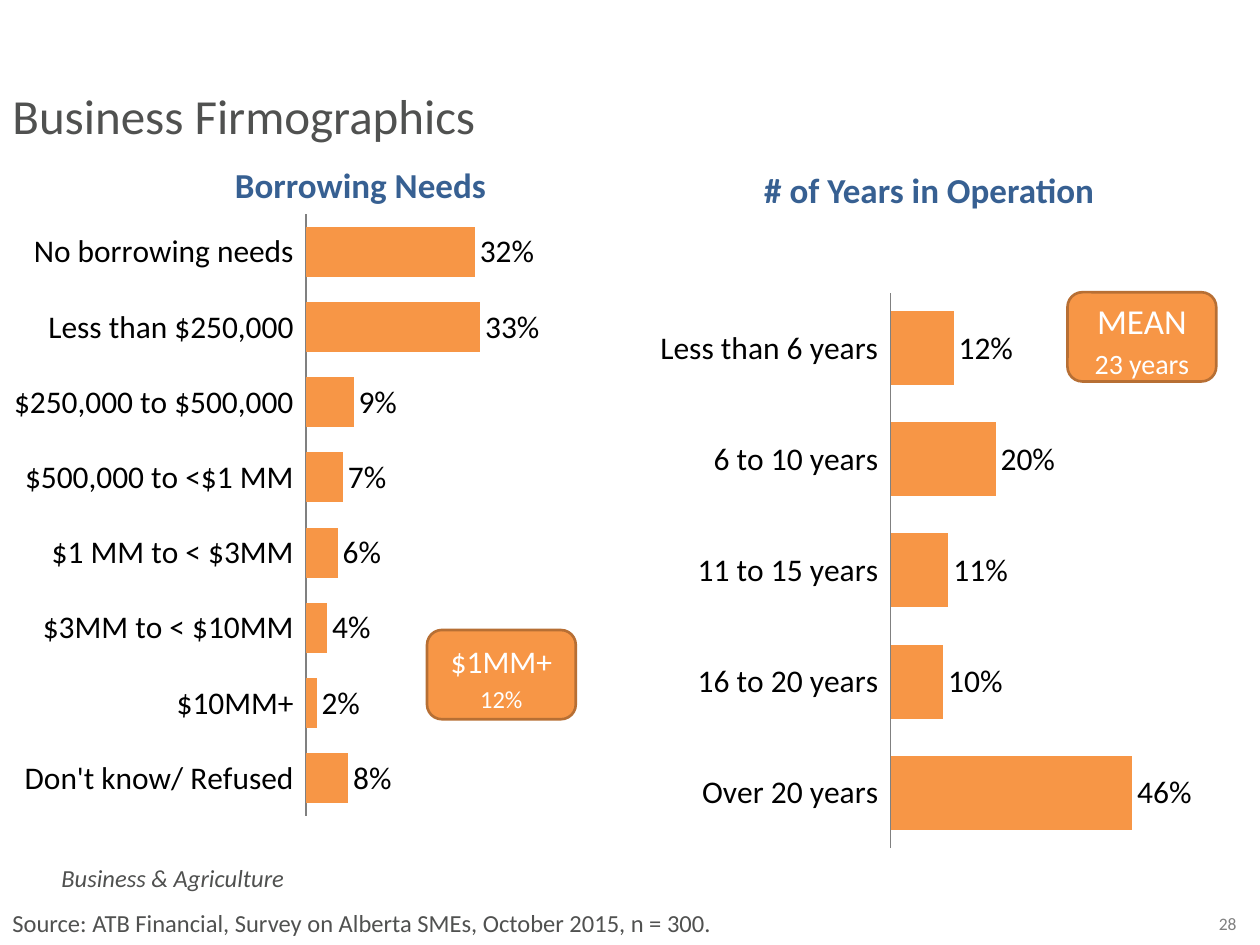
from dataclasses import dataclass

from pptx import Presentation
from pptx.chart.data import CategoryChartData
from pptx.dml.color import RGBColor
from pptx.enum.chart import XL_CHART_TYPE, XL_LABEL_POSITION, XL_TICK_LABEL_POSITION, XL_TICK_MARK
from pptx.enum.shapes import MSO_SHAPE
from pptx.enum.text import MSO_ANCHOR, MSO_AUTO_SIZE, PP_ALIGN
from pptx.oxml import parse_xml
from pptx.oxml.ns import nsdecls
from pptx.util import Pt

BAR_CHART = XL_CHART_TYPE.BAR_CLUSTERED
OUTSIDE_END = XL_LABEL_POSITION.OUTSIDE_END
LABELS_LOW = XL_TICK_LABEL_POSITION.LOW
NO_TICK = XL_TICK_MARK.NONE
ROUNDED = MSO_SHAPE.ROUNDED_RECTANGLE
MIDDLE = MSO_ANCHOR.MIDDLE
FIT_SHAPE = MSO_AUTO_SIZE.SHAPE_TO_FIT_TEXT
LEFT, CENTER = PP_ALIGN.LEFT, PP_ALIGN.CENTER


@dataclass(frozen=True)
class Theme:
    font: str = "Calibri"
    ink: str = "000000"
    text: str = "505150"
    heading: str = "376092"
    muted: str = "808080"
    inverse: str = "FFFFFF"
    accent: str = "F79646"
    accent_edge: str = "B76F34"
    title_size: int = 28
    heading_size: int = 20
    chart_size: int = 18
    note_size: int = 14
    number_size: int = 10


THEME = Theme()

BORROWING = {
    "No borrowing needs": 0.32,
    "Less than $250,000": 0.33,
    "$250,000 to $500,000": 0.09,
    "$500,000 to <$1 MM": 0.07,
    "$1 MM to < $3MM": 0.06,
    "$3MM to < $10MM": 0.04,
    "$10MM+": 0.02,
    "Don't know/ Refused": 0.08,
}
YEARS = {
    "Less than 6 years": 0.12,
    "6 to 10 years": 0.20,
    "11 to 15 years": 0.11,
    "16 to 20 years": 0.10,
    "Over 20 years": 0.46,
}


def points(*lengths):
    return [Pt(length) for length in lengths]


def set_values(target, values):
    for name, value in values.items():
        setattr(target, name, value)


def style_font(font, size, color, **values):
    set_values(font, {"name": THEME.font, "size": Pt(size), **values})
    font.color.rgb = RGBColor.from_string(color)


def add_text(page, frame, text, size, color, align=LEFT, **values):
    box = page.shapes.add_textbox(*points(*frame))
    set_values(box.text_frame, {"word_wrap": True, "auto_size": FIT_SHAPE})
    para = box.text_frame.paragraphs[0]
    para.alignment = align
    span = para.add_run()
    span.text = text
    style_font(span.font, size, color, **values)


def add_callout(page, left, top, lines):
    """Draw a rounded box with centred lines given as (text, size)."""
    box = page.shapes.add_shape(ROUNDED, *points(left, top, 85, 51))
    box.shadow.inherit = False
    box.fill.solid()
    box.fill.fore_color.rgb = RGBColor.from_string(THEME.accent)
    box.line.color.rgb = RGBColor.from_string(THEME.accent_edge)
    box.line.width = Pt(1.5)
    frame = box.text_frame
    set_values(frame, {"word_wrap": True, "vertical_anchor": MIDDLE, "margin_top": Pt(7)})
    for index, (text, size) in enumerate(lines):
        para = frame.add_paragraph() if index else frame.paragraphs[0]
        para.alignment = CENTER
        if index:
            para.space_before = Pt(0.2 * size)
        span = para.add_run()
        span.text = text
        style_font(span.font, size, THEME.inverse)


def place_plot(chart, left, width, height):
    """Fix the inner plot area, as fractions of the chart."""
    plot_area = chart.plots[0]._element.getparent()
    for old in plot_area.findall("{*}layout"):
        plot_area.remove(old)
    places = {"x": left, "y": 0, "w": width, "h": height}
    modes = "".join(f'<c:{key}Mode val="edge"/>' for key in "xy")
    values = "".join(f'<c:{key} val="{value}"/>' for key, value in places.items())
    plot_area.insert(0, parse_xml(
        f'<c:layout {nsdecls("c")}><c:manualLayout><c:layoutTarget val="inner"/>'
        f"{modes}{values}</c:manualLayout></c:layout>"))


def add_bars(page, frame, shares, plot_left, plot_width, axis_width):
    data = CategoryChartData(number_format="0%")
    data.categories = list(shares)
    data.add_series("Series 1", list(shares.values()))
    chart = page.shapes.add_chart(BAR_CHART, *points(*frame), data).chart
    set_values(chart, {"has_legend": False, "has_title": False})
    style_font(chart.font, THEME.chart_size, THEME.ink)

    # Axes
    categories = chart.category_axis
    set_values(categories, {
        "reverse_order": True, "major_tick_mark": NO_TICK, "minor_tick_mark": NO_TICK,
        "has_major_gridlines": False, "tick_label_position": LABELS_LOW,
    })
    categories.format.line.color.rgb = RGBColor.from_string(THEME.muted)
    categories.format.line.width = Pt(axis_width)
    set_values(chart.value_axis, {
        "visible": False, "has_major_gridlines": False,
        "minimum_scale": 0, "maximum_scale": 0.7,
    })

    # Bars and labels
    plot = chart.plots[0]
    set_values(plot, {"gap_width": 50, "vary_by_categories": False, "has_data_labels": True})
    set_values(plot.data_labels, {
        "show_value": True, "number_format": "0%",
        "number_format_is_linked": False, "position": OUTSIDE_END,
    })
    style_font(plot.data_labels.font, THEME.chart_size, THEME.ink)
    fill = plot.series[0].format.fill
    fill.solid()
    fill.fore_color.rgb = RGBColor.from_string(THEME.accent)
    place_plot(chart, plot_left, plot_width, 0.96)


def main():
    deck = Presentation()
    set_values(deck, {"slide_width": Pt(720), "slide_height": Pt(540)})
    page = deck.slides.add_slide(deck.slide_layouts[6])

    # Title and footer
    add_text(page, (0, 45.4, 420, 41), "Business Firmographics", THEME.title_size, THEME.text)
    add_text(page, (28, 489.6, 202, 24.5), "Business & Agriculture",
             THEME.note_size, THEME.text, italic=True)
    add_text(page, (0, 515.5, 510, 24.5),
             "Source: ATB Financial, Survey on Alberta SMEs, October 2015, n = 300.",
             THEME.note_size, THEME.text)
    add_text(page, (684, 518.4, 35, 19.5), "28", THEME.number_size, THEME.muted, CENTER)

    # Charts
    add_bars(page, (299, 167, 420, 331), YEARS, 0.5, 0.5, 0.75)
    add_bars(page, (8, 121.7, 378, 359), BORROWING, 0.44, 0.56, 1.25)

    # Chart headings
    for frame, text in (((114, 90, 184, 31.5), "Borrowing Needs"),
                        ((402, 93, 258, 31.5), "# of Years in Operation")):
        add_text(page, frame, text, THEME.heading_size, THEME.heading, CENTER, bold=True)

    # Callouts
    add_callout(page, 244, 360, [("$1MM+", 18), ("12%", 14)])
    add_callout(page, 610, 167, [("MEAN", 20), ("23 years", 16)])

    deck.save("out.pptx")


if __name__ == "__main__":
    main()
